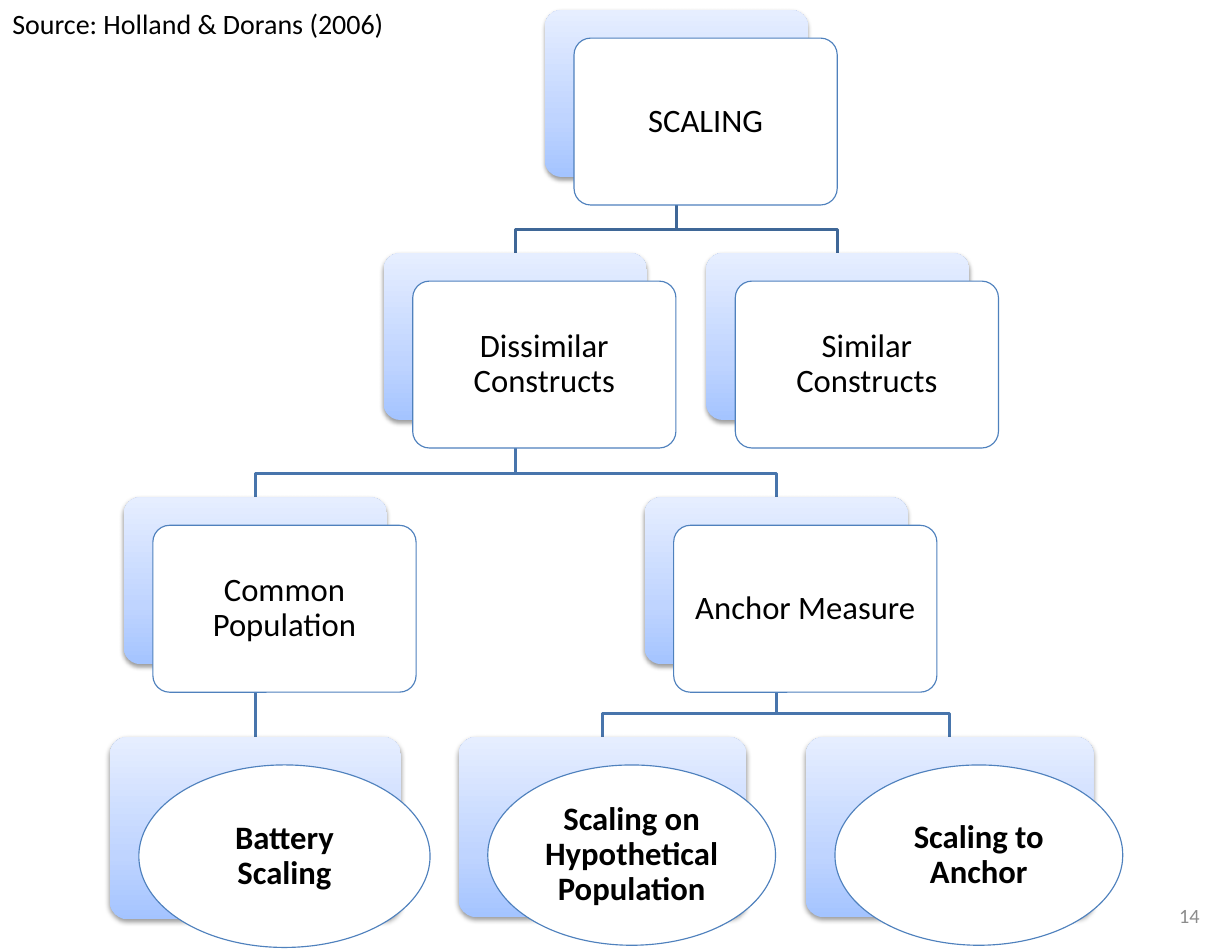
from copy import deepcopy
from dataclasses import dataclass

from lxml.etree import SubElement
from pptx import Presentation
from pptx.dml.color import RGBColor
from pptx.enum.shapes import MSO_CONNECTOR, MSO_SHAPE
from pptx.enum.text import MSO_ANCHOR, PP_ALIGN
from pptx.oxml.ns import qn
from pptx.util import Inches, Pt

BLACK = RGBColor(0x00, 0x00, 0x00)
WHITE = RGBColor(0xFF, 0xFF, 0xFF)
GREY = RGBColor(0x8C, 0x8C, 0x8C)
BLUE = RGBColor(0x4F, 0x81, 0xBD)
NAVY = RGBColor(0x3F, 0x67, 0x97)
STEEL = RGBColor(0x48, 0x75, 0xAC)
BLEND = [(0, RGBColor(0xA4, 0xC4, 0xFF)), (0.35, RGBColor(0xBF, 0xD4, 0xFF)),
         (1, RGBColor(0xE6, 0xEE, 0xFF))]

# The grid has ten columns and ten rows to the inch.
COLS, ROWS = 110, 85
TOPS = [0.9, 22.6, 44.4, 65.8]
BOX, OVAL, WIDE = (23.5, 14.9), (25.7, 16.1), (26, 16.3)
SHIFT_X, SHIFT_Y = 2.6, 2.5
BEND = 2.1


@dataclass
class Node:
    text: str
    level: int
    mid: float
    size: tuple = BOX
    parent: "Node" = None

    @property
    def top(self):
        return TOPS[self.level]

    @property
    def base(self):
        return self.top + self.size[1]


def cell(*spans):
    return [Inches(span / 10) for span in spans]


def write(frame, text, size=21, color=BLACK, bold=False, align=PP_ALIGN.LEFT,
          anchor=MSO_ANCHOR.TOP, wrap=True, gap=1.0, pad=(0.11, 0.06)):
    frame.word_wrap = wrap
    frame.vertical_anchor = anchor
    frame.margin_left = frame.margin_right = Inches(pad[0])
    frame.margin_top = frame.margin_bottom = Inches(pad[1])
    para = frame.paragraphs[0]
    para.alignment = align
    para.line_spacing = gap
    run = para.add_run()
    run.text = text
    font = run.font
    font.name, font.size, font.bold = "Calibri", Pt(size), bold
    font.color.rgb = color


class Chart:
    def __init__(self, deck):
        self.shapes = deck.slides.add_slide(deck.slide_layouts[6]).shapes

    def label(self, text, x, y, wide, high, **style):
        box = self.shapes.add_textbox(*cell(x, y, wide, high))
        write(box.text_frame, text, **style)

    def shape(self, kind, x, y, wide, high):
        shape = self.shapes.add_shape(kind, *cell(x, y, wide, high))
        shape.shadow.inherit = False
        if kind == MSO_SHAPE.ROUNDED_RECTANGLE:
            shape.adjustments[0] = 0.1
        return shape

    def blend(self, shape):
        """Fill with the three-stop gradient and cast a soft shadow below."""
        fill = shape.fill
        fill.gradient()
        fill.gradient_angle = 90
        props = shape._element.spPr
        stops = props.find(".//" + qn("a:gsLst"))
        stops.insert(1, deepcopy(stops[0]))
        for stop, (place, color) in zip(fill.gradient_stops, BLEND):
            stop.position = place
            stop.color.rgb = color
        shape.line.fill.background()
        shade = SubElement(props.find(qn("a:effectLst")), qn("a:outerShdw"),
                           blurRad=str(Pt(3.1)), dist=str(Pt(1.6)),
                           dir="5400000", rotWithShape="0")
        tone = SubElement(shade, qn("a:srgbClr"), val=str(BLACK))
        SubElement(tone, qn("a:alpha"), val="38000")

    def node(self, node):
        wide, high = node.size
        left = node.mid - wide / 2
        leaf = node.level == len(TOPS) - 1
        round_box = MSO_SHAPE.ROUNDED_RECTANGLE
        self.blend(self.shape(round_box, left, node.top, wide, high))
        front = self.shape(MSO_SHAPE.OVAL if leaf else round_box,
                           left + SHIFT_X, node.top + SHIFT_Y, wide, high)
        front.fill.solid()
        front.fill.fore_color.rgb = WHITE
        front.line.color.rgb = BLUE
        front.line.width = Pt(0.75)
        write(front.text_frame, node.text, bold=leaf, align=PP_ALIGN.CENTER,
              anchor=MSO_ANCHOR.MIDDLE, gap=0.9, pad=(0.09, 0.09))

    def link(self, node):
        """Join a node to its parent, bending just above the node."""
        start, end = (node.parent.mid, node.parent.base), (node.mid, node.top)
        if start[0] == end[0]:
            line = self.shapes.add_connector(MSO_CONNECTOR.STRAIGHT,
                                             *cell(*start, *end))
            SubElement(line._element.spPr, qn("a:effectLst"))
        else:
            turn = node.top - BEND
            path = self.shapes.build_freeform(*cell(*start))
            path.add_line_segments(
                [cell(start[0], turn), cell(end[0], turn), cell(*end)],
                close=False)
            line = path.convert_to_shape()
            line.fill.background()
            line.shadow.inherit = False
        line.line.color.rgb = NAVY if node.level == 1 else STEEL
        line.line.width = Pt(2)


def main():
    deck = Presentation()
    deck.slide_width, deck.slide_height = cell(COLS, ROWS)
    chart = Chart(deck)

    root = Node("SCALING", 0, 60.4)
    unlike = Node("Dissimilar Constructs", 1, 46, parent=root)
    alike = Node("Similar Constructs", 1, 74.8, parent=root)
    common = Node("Common Population", 2, 22.8, parent=unlike)
    anchor = Node("Anchor Measure", 2, 69.3, parent=unlike)
    leaves = [
        Node("Battery Scaling", 3, 22.8, WIDE, common),
        Node("Scaling on Hypothetical Population", 3, 53.8, OVAL, anchor),
        Node("Scaling to Anchor", 3, 84.8, OVAL, anchor),
    ]
    nodes = [root, unlike, alike, common, anchor, *leaves]
    for node in nodes[1:]:
        chart.link(node)
    for node in nodes:
        chart.node(node)

    chart.label("Source: Holland & Dorans (2006)", 0, 0, 35.8, 4.2,
                size=18, wrap=False)
    chart.label("14", 82.5, 79.5, 25.7, 4.5, size=13, color=GREY,
                align=PP_ALIGN.RIGHT, anchor=MSO_ANCHOR.MIDDLE)
    deck.save("out.pptx")


if __name__ == "__main__":
    main()
